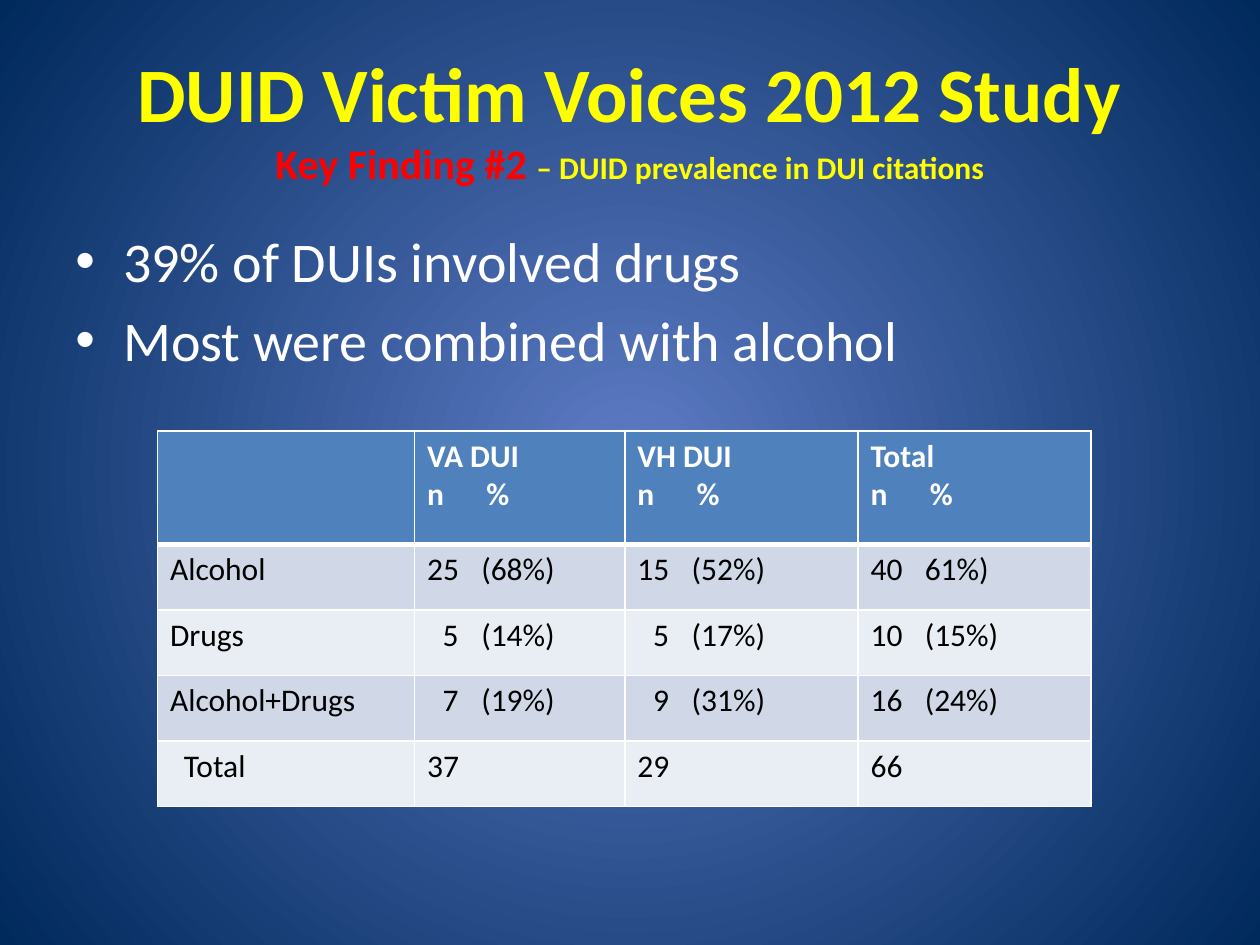
import pptx
import pptx.util
import pptx.dml.color
import pptx.enum.text
import pptx.oxml
import pptx.oxml.ns
from lxml import etree

Inches = pptx.util.Inches
Pt = pptx.util.Pt
RGBColor = pptx.dml.color.RGBColor
qn = pptx.oxml.ns.qn

FONT = "Calibri"
YELLOW = RGBColor(0xFF, 0xFF, 0x00)
RED = RGBColor(0xFF, 0x00, 0x00)
WHITE = RGBColor(0xFF, 0xFF, 0xFF)
BLACK = RGBColor(0x00, 0x00, 0x00)
GLOW = RGBColor(0x5E, 0x7C, 0xC5)
NAVY = RGBColor(0x00, 0x29, 0x5C)
HEADER_BLUE = RGBColor(0x4F, 0x81, 0xBD)
BANDS = (RGBColor(0xD0, 0xD8, 0xE8), RGBColor(0xE9, 0xED, 0xF4))

FINDINGS = ("39% of DUIs involved drugs", "Most were combined with alcohol")
COLUMN_WIDTHS = (2.04, 1.67, 1.85, 1.85)
ROW_HEIGHTS = (0.9, 0.52, 0.52, 0.52, 0.52)
CITATIONS = (
    ("", "VA DUI\nn\t%", "VH DUI\nn\t%", "Total\nn\t%"),
    ("Alcohol", "\t25\t(68%)", "\t15\t(52%)", "\t40\t61%)"),
    ("Drugs", "\t5\t(14%)", "\t5\t(17%)", "\t10\t(15%)"),
    ("Alcohol+Drugs", "\t7\t(19%)", "\t9\t(31%)", "\t16\t(24%)"),
    ("Total", "\t37", "\t29", "\t66"),
)
HEADER_TABS = ((0.47, "l"),)
COUNT_TABS = ((0.25, "r"), (0.43, "l"))


def style_font(font, size, color, bold=False):
    font.name = FONT
    font.size = Pt(size)
    font.color.rgb = color
    font.bold = bold


def paint_background(slide):
    fill = slide.background.fill
    fill.gradient()
    for stop, color in zip(fill.gradient_stops, (GLOW, NAVY)):
        stop.color.rgb = color
    gradient = next(slide.element.iter(qn("a:gradFill")))
    gradient.remove(gradient.find(qn("a:lin")))
    circle = etree.SubElement(gradient, qn("a:path"), path="circle")
    etree.SubElement(circle, qn("a:fillToRect"),
                     l="50000", t="50000", r="50000", b="50000")


def add_text_frame(slide, left, top, width, height):
    frame = slide.shapes.add_textbox(left, top, width, height).text_frame
    frame.word_wrap = True
    return frame


def add_heading(slide, left, top, width, height):
    frame = add_text_frame(slide, left, top, width, height)
    frame.vertical_anchor = pptx.enum.text.MSO_ANCHOR.MIDDLE
    heading = frame.paragraphs[0]
    heading.alignment = pptx.enum.text.PP_ALIGN.CENTER
    heading.text = "DUID Victim Voices 2012 Study\v"
    style_font(heading.runs[0].font, 44, YELLOW, True)
    for words, size, color in (
        ("Key Finding #2 ", 24, RED),
        ("– DUID prevalence in DUI citations", 18, YELLOW),
    ):
        run = heading.add_run()
        run.text = words
        style_font(run.font, size, color, True)


def add_findings(slide, left, top, width, height):
    frame = add_text_frame(slide, left, top, width, height)
    frame.text = "\n".join(FINDINGS)
    for finding in frame.paragraphs:
        finding.space_before = Pt(6.4)
        style_font(finding.runs[0].font, 32, WHITE)
        properties = finding._p.get_or_add_pPr()
        properties.set("marL", str(Inches(0.38)))
        properties.set("indent", str(-Inches(0.38)))
        etree.SubElement(properties, qn("a:buFont"), typeface="Arial")
        etree.SubElement(properties, qn("a:buChar"), char="•")


def set_tabs(paragraph, tabs):
    tab_list = etree.SubElement(paragraph._p.get_or_add_pPr(), qn("a:tabLst"))
    for position, alignment in tabs:
        etree.SubElement(tab_list, qn("a:tab"),
                         pos=str(Inches(position)), algn=alignment)


def set_borders(cell, bottom_width):
    properties = cell._tc.get_or_add_tcPr()
    edges = (("lnL", 1), ("lnR", 1), ("lnT", 1), ("lnB", bottom_width))
    for position, (edge, width) in enumerate(edges):
        line = etree.Element(qn(f"a:{edge}"), w=str(Pt(width)))
        fill = etree.SubElement(line, qn("a:solidFill"))
        etree.SubElement(fill, qn("a:srgbClr"), val=str(WHITE))
        properties.insert(position, line)


def fill_cell(cell, words, is_header, is_label, band):
    cell.text = words
    cell.fill.solid()
    cell.fill.fore_color.rgb = HEADER_BLUE if is_header else band
    set_borders(cell, 3 if is_header else 1)
    for paragraph in cell.text_frame.paragraphs:
        style_font(paragraph.font, 18, WHITE if is_header else BLACK, is_header)
        for run in paragraph.runs:
            style_font(run.font, 18, WHITE if is_header else BLACK, is_header)
        if "\t" in words and not is_label:
            set_tabs(paragraph, HEADER_TABS if is_header else COUNT_TABS)


def add_citation_table(slide, left, top, width, height):
    table = slide.shapes.add_table(
        len(ROW_HEIGHTS), len(COLUMN_WIDTHS), left, top, width, height).table
    for column, column_width in zip(table.columns, COLUMN_WIDTHS):
        column.width = Inches(column_width)
    for row, row_height in zip(table.rows, ROW_HEIGHTS):
        row.height = Inches(row_height)
    for r, row_words in enumerate(CITATIONS):
        for c, words in enumerate(row_words):
            fill_cell(table.cell(r, c), words, r == 0, c == 0, BANDS[(r - 1) % 2])
    total_label = table.cell(len(CITATIONS) - 1, 0)
    total_label.margin_left = Inches(0.21)


def main():
    presentation = pptx.Presentation()
    presentation.slide_width = Inches(10)
    presentation.slide_height = Inches(7.5)
    slide = presentation.slides.add_slide(presentation.slide_layouts[6])
    paint_background(slide)
    add_heading(slide, Inches(0.5), Inches(0.3), Inches(9), Inches(1.25))
    add_findings(slide, Inches(0.5), Inches(1.75), Inches(9), Inches(4.95))
    add_citation_table(slide, Inches(1.25), Inches(3.42), Inches(7.42), Inches(2.99))
    presentation.save("out.pptx")


if __name__ == "__main__":
    main()
